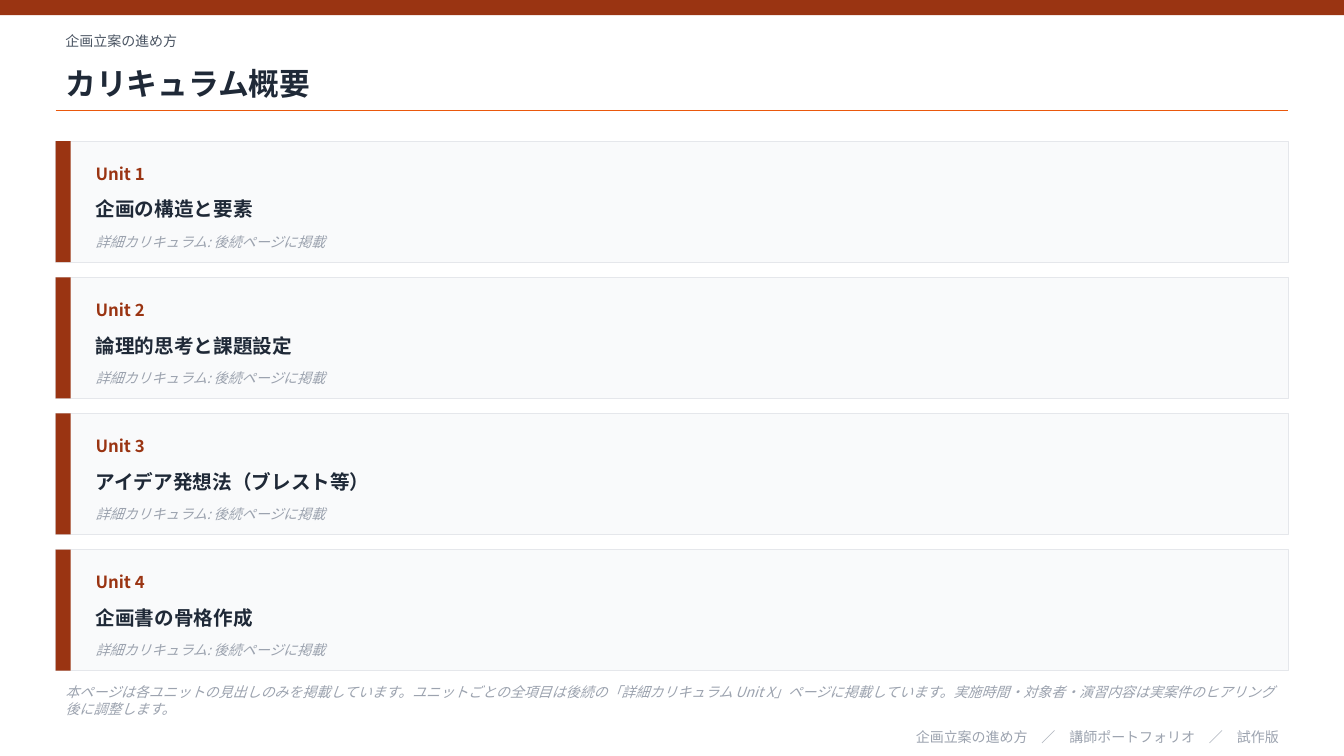
from lxml.etree import SubElement
from pptx import Presentation
from pptx.dml.color import RGBColor as Rgb
from pptx.enum.shapes import MSO_CONNECTOR as Link, MSO_SHAPE as Kind
from pptx.enum.text import MSO_ANCHOR as Anchor, PP_ALIGN as Align
from pptx.oxml.ns import qn
from pptx.util import Cm, Pt

COURSE = "企画立案の進め方"
TITLE = "カリキュラム概要"
UNITS = [
    "企画の構造と要素",
    "論理的思考と課題設定",
    "アイデア発想法（ブレスト等）",
    "企画書の骨格作成",
]
DETAIL = "詳細カリキュラム: 後続ページに掲載"
NOTE = (
    "本ページは各ユニットの見出しのみを掲載しています。"
    "ユニットごとの全項目は後続の「詳細カリキュラム Unit X」ページに掲載しています。"
    "実施時間・対象者・演習内容は実案件のヒアリング後に調整します。"
)
FOOTER = "　／　".join([COURSE, "講師ポートフォリオ", "試作版"])

FONT = "Noto Sans CJK JP"
COLORS = {
    "rust": "9A3412",
    "orange": "EA580C",
    "ink": "1F2937",
    "slate": "4B5563",
    "gray": "9CA3AF",
    "card": "F9FAFB",
    "edge": "E5E7EB",
}

PAGE_W, PAGE_H = 33.86, 19.05
LEFT, WIDTH = 1.4, 31.06
BAR = 0.38
RULE_Y = 2.79
CARD_Y, CARD_H, PITCH = 3.56, 3.05, 3.43
TEXT_X, TEXT_W = 2.16, 29.79

deck = Presentation()
deck.slide_width, deck.slide_height = Cm(PAGE_W), Cm(PAGE_H)
slide = deck.slides.add_slide(deck.slide_layouts[6])
shapes = slide.shapes


def tint(name):
    return Rgb.from_string(COLORS[name])


def add_text(text, x, y, w, h, size=10, color="gray", bold=False,
             italic=False, align=Align.LEFT):
    frame = shapes.add_textbox(Cm(x), Cm(y), Cm(w), Cm(h)).text_frame
    frame.word_wrap = True
    frame.vertical_anchor = Anchor.MIDDLE
    para = frame.paragraphs[0]
    para.alignment = align
    run = para.add_run()
    run.text = text
    font = run.font
    font.name, font.size = FONT, Pt(size)
    font.bold, font.italic = bold, italic
    font.color.rgb = tint(color)
    SubElement(run._r.get_or_add_rPr(), qn("a:ea")).set("typeface", FONT)


def add_box(x, y, w, h, fill, edge=None):
    box = shapes.add_shape(Kind.RECTANGLE, Cm(x), Cm(y), Cm(w), Cm(h))
    box.shadow.inherit = False
    box.fill.solid()
    box.fill.fore_color.rgb = tint(fill)
    if edge:
        box.line.color.rgb = tint(edge)
        box.line.width = Pt(0.5)
    else:
        box.line.fill.background()


def add_rule(y):
    rule = shapes.add_connector(
        Link.STRAIGHT, Cm(LEFT), Cm(y), Cm(LEFT + WIDTH), Cm(y))
    rule.line.color.rgb = tint("orange")
    rule.line.width = Pt(1)
    SubElement(rule._element.spPr, qn("a:effectLst"))


def add_card(num, name):
    top = CARD_Y + (num - 1) * PITCH
    add_box(LEFT, top, WIDTH, CARD_H, "card", "edge")
    add_box(LEFT, top, BAR, CARD_H, "rust")
    add_text(f"Unit {num}", TEXT_X, top + 0.3, 3.81, 1.02,
             size=12, color="rust", bold=True)
    add_text(name, TEXT_X, top + 1.14, TEXT_W, 1.14,
             size=14, color="ink", bold=True)
    add_text(DETAIL, TEXT_X, top + 2.16, TEXT_W, 0.76, italic=True)


add_box(0, 0, PAGE_W, BAR, "rust")
add_text(COURSE, LEFT, 0.64, WIDTH, 0.76, color="slate")
add_text(TITLE, LEFT, 1.4, WIDTH, 1.4, size=22, color="ink", bold=True)
add_rule(RULE_Y)
for num, name in enumerate(UNITS, 1):
    add_card(num, name)
add_text(NOTE, LEFT, 17.15, WIDTH, 1.02, italic=True)
add_text(FOOTER, LEFT, 18.29, WIDTH, 0.56, align=Align.RIGHT)

deck.save("out.pptx")
